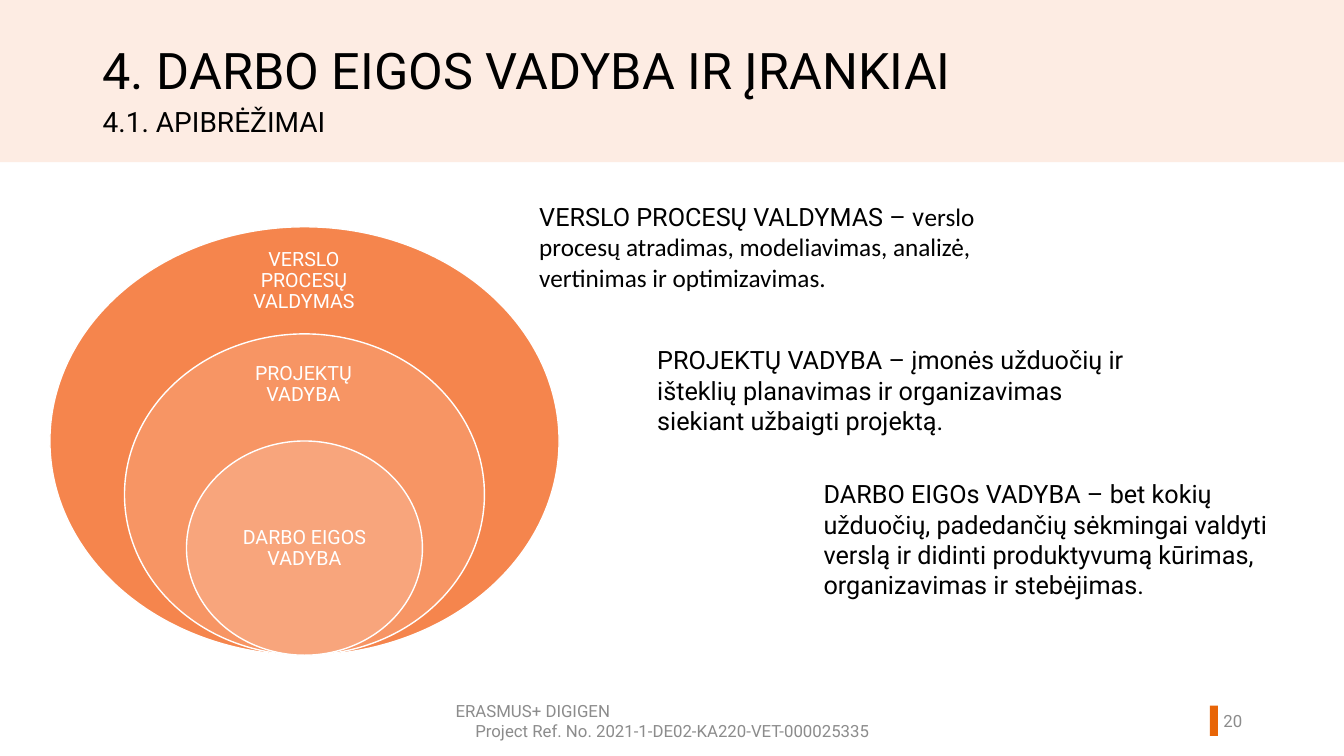
"""Build the workflow management definitions slide."""

from dataclasses import dataclass

from pptx import Presentation
from pptx.dml.color import RGBColor
from pptx.enum.shapes import MSO_SHAPE
from pptx.enum.text import MSO_ANCHOR, PP_ALIGN
from pptx.shapes.autoshape import Shape
from pptx.slide import Slide
from pptx.util import Inches, Pt


@dataclass(frozen=True)
class Theme:
    """Colours, fonts and type sizes of the slide."""

    band: str = "FDECE3"
    accent: str = "E86507"
    ink: str = "000000"
    muted: str = "8C8C8C"
    white: str = "FFFFFF"
    font: str = "Roboto"
    alternate_font: str = "Calibri"
    title_size: int = 36
    subtitle_size: int = 20
    body_size: int = 18
    ring_size: int = 14
    footer_size: int = 12


@dataclass(frozen=True)
class Area:
    """A rectangle in inches."""

    left: float
    top: float
    width: float
    height: float

    def lengths(self) -> tuple[Inches, Inches, Inches, Inches]:
        """Return the rectangle as slide lengths."""
        return Inches(self.left), Inches(self.top), Inches(self.width), Inches(self.height)


@dataclass(frozen=True)
class Style:
    """Formatting shared by all text in a box."""

    size: int
    color: str
    alignments: tuple[PP_ALIGN, ...] = (PP_ALIGN.LEFT,)
    anchor: MSO_ANCHOR = MSO_ANCHOR.TOP
    line_spacing: float = 1.0
    inset: tuple[float, float] = (0.1, 0.05)


@dataclass(frozen=True)
class Ring:
    """One nested ellipse and its label."""

    width: float
    share: float
    color: str
    label: str
    label_area: Area


@dataclass(frozen=True)
class Definition:
    """One definition, with an optional ending in the alternate font."""

    left: float
    top: float
    height: float
    text: str
    ending: str = ""


THEME = Theme()
RING_CENTER, RING_BOTTOM, RING_HEIGHT = 3.02, 6.5, 4.25
DEFINITION_WIDTH = 5

HEADING = Style(THEME.title_size, THEME.ink, line_spacing=0.9)
SUBHEADING = Style(THEME.subtitle_size, THEME.ink, line_spacing=0.9)
BODY = Style(THEME.body_size, THEME.ink)
RING_LABEL = Style(THEME.ring_size, THEME.white, (PP_ALIGN.CENTER,),
                   MSO_ANCHOR.MIDDLE, 0.9, (0.11, 0.11))
FOOTER = Style(THEME.footer_size, THEME.muted, (PP_ALIGN.LEFT, PP_ALIGN.CENTER), MSO_ANCHOR.MIDDLE)
PAGE_NUMBER = Style(THEME.footer_size, THEME.muted, (PP_ALIGN.RIGHT,), MSO_ANCHOR.MIDDLE)

RINGS = (
    Ring(5.05, 1, "F5854D", "VERSLO PROCESŲ VALDYMAS", Area(2.13, 2.47, 1.77, 0.64)),
    Ring(3.57, 0.75, "F79564", "PROJEKTŲ VADYBA", Area(2.18, 3.52, 1.66, 0.6)),
    Ring(2.34, 0.5, "F8A57C", "DARBO EIGOS VADYBA", Area(2.19, 4.91, 1.66, 1.06)),
)
DEFINITIONS = (
    Definition(5.25, 1.95, 1.01, "VERSLO PROCESŲ VALDYMAS – v",
               "erslo procesų atradimas, modeliavimas, analizė, vertinimas ir optimizavimas."),
    Definition(6.42, 3.37, 1.01, "PROJEKTŲ VADYBA – įmonės užduočių ir išteklių planavimas "
               "ir organizavimas siekiant užbaigti projektą."),
    Definition(8.07, 4.7, 1.31, "DARBO EIGOs VADYBA – bet kokių užduočių, padedančių sėkmingai "
               "valdyti verslą ir didinti produktyvumą kūrimas, organizavimas ir stebėjimas."),
)


def add_filled(page: Slide, kind: MSO_SHAPE, area: Area, color: str) -> Shape:
    """Add a flat shape without an outline."""
    shape = page.shapes.add_shape(kind, *area.lengths())
    shape.shadow.inherit = False
    shape.fill.solid()
    shape.fill.fore_color.rgb = RGBColor.from_string(color)
    shape.line.fill.background()
    return shape


def add_text(page: Slide, area: Area, text: str, style: Style) -> Shape:
    """Add a wrapped text box in one style."""
    box = page.shapes.add_textbox(*area.lengths())
    frame = box.text_frame
    frame.word_wrap = True
    frame.vertical_anchor = style.anchor
    frame.margin_left = frame.margin_right = Inches(style.inset[0])
    frame.margin_top = frame.margin_bottom = Inches(style.inset[1])
    frame.text = text
    for para, alignment in zip(frame.paragraphs, style.alignments):
        para.alignment = alignment
        para.line_spacing = style.line_spacing
        para.font.size = Pt(style.size)
        para.font.name = THEME.font
        para.font.color.rgb = RGBColor.from_string(style.color)
    return box


def add_ring(page: Slide, ring: Ring) -> None:
    """Add an ellipse resting on the common bottom, with its label."""
    height = RING_HEIGHT * ring.share
    area = Area(RING_CENTER - ring.width / 2, RING_BOTTOM - height, ring.width, height)
    ellipse = add_filled(page, MSO_SHAPE.OVAL, area, ring.color)
    ellipse.line.color.rgb = RGBColor.from_string(THEME.white)
    ellipse.line.width = Pt(1)
    add_text(page, ring.label_area, ring.label, RING_LABEL)


def add_definition(page: Slide, definition: Definition) -> None:
    """Add a definition and its ending."""
    area = Area(definition.left, definition.top, DEFINITION_WIDTH, definition.height)
    box = add_text(page, area, definition.text, BODY)
    if definition.ending:
        span = box.text_frame.paragraphs[0].add_run()
        span.text = definition.ending
        span.font.name = THEME.alternate_font


def main() -> None:
    """Build and save the deck."""
    deck = Presentation()
    deck.slide_width, deck.slide_height = Inches(13.33), Inches(7.5)
    page = deck.slides.add_slide(deck.slide_layouts[6])
    add_filled(page, MSO_SHAPE.RECTANGLE, Area(0, 0, 13.33, 1.61), THEME.band)
    add_filled(page, MSO_SHAPE.RECTANGLE, Area(12, 7, 0.08, 0.3), THEME.accent)
    add_text(page, Area(4.42, 6.95, 4.5, 0.4),
             "ERASMUS+ DIGIGEN\nProject Ref. No. 2021-1-DE02-KA220-VET-000025335", FOOTER)
    add_text(page, Area(11.77, 6.95, 0.65, 0.4), "20", PAGE_NUMBER)
    add_text(page, Area(0.92, 0.41, 10.85, 0.85), "4. DARBO EIGOS VADYBA IR ĮRANKIAI", HEADING)
    add_text(page, Area(0.92, 1.03, 10.85, 0.85), "4.1. APIBRĖŽIMAI", SUBHEADING)
    for ring in RINGS:
        add_ring(page, ring)
    for definition in DEFINITIONS:
        add_definition(page, definition)
    deck.save("out.pptx")


if __name__ == "__main__":
    main()
